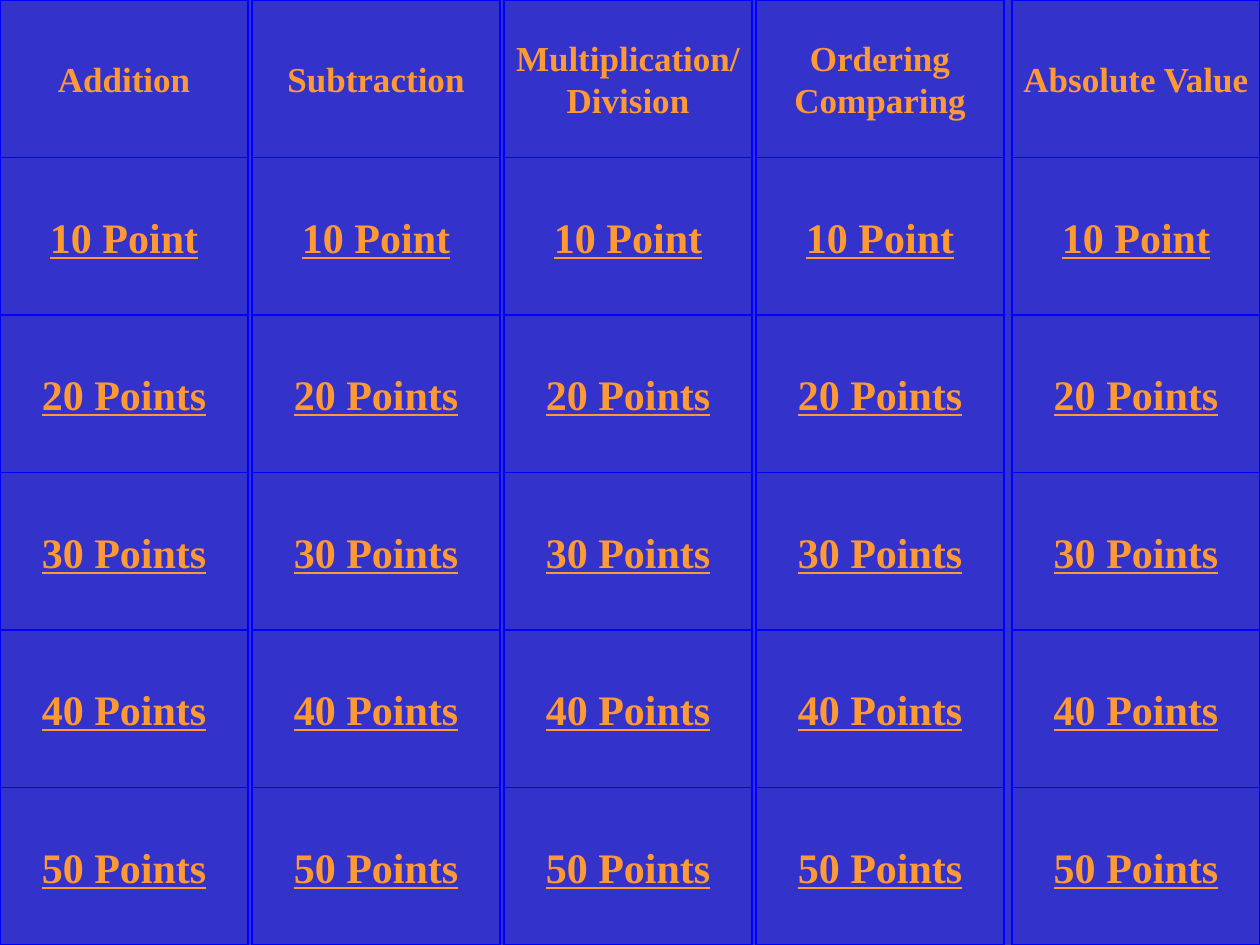
from pptx import Presentation
from pptx.dml.color import RGBColor
from pptx.enum.shapes import MSO_SHAPE
from pptx.enum.text import MSO_ANCHOR, PP_ALIGN
from pptx.util import Pt

BLUE, EDGE, GOLD = "3333CC", "0000FF", "FF9933"
WIDE, HIGH = 141.75, 90


def paint(fmt, color):
    fmt.solid()
    fmt.fore_color.rgb = RGBColor.from_string(color)


def add_cell(slide, left, top, text, size, under):
    cell = slide.shapes.add_shape(
        MSO_SHAPE.ACTION_BUTTON_CUSTOM, Pt(left), Pt(top), Pt(WIDE), Pt(HIGH))
    cell.shadow.inherit = False
    paint(cell.fill, BLUE)
    paint(cell.line.fill, EDGE)
    cell.line.width = Pt(0.75)
    frame = cell.text_frame
    frame.word_wrap = False
    frame.vertical_anchor = MSO_ANCHOR.MIDDLE
    frame.text = text
    for para in frame.paragraphs:
        para.alignment = PP_ALIGN.CENTER
        font = para.font
        font.name = "Times New Roman"
        font.size = Pt(size)
        font.bold = True
        font.underline = under
        paint(font.fill, GOLD)


# Slide and background
deck = Presentation()
deck.slide_width, deck.slide_height = Pt(720), Pt(540)
slide = deck.slides.add_slide(deck.slide_layouts[6])
paint(slide.background.fill, BLUE)

# Board: the last column sits flush with the right edge
topics = ["Addition", "Subtraction", "Multiplication/\nDivision",
          "Ordering\nComparing", "Absolute Value"]
lefts = [0, 144, 288, 432, 720 - WIDE]
scores = ["10 Point", "20 Points", "30 Points", "40 Points", "50 Points"]

for left, topic in zip(lefts, topics):
    add_cell(slide, left, 0, topic, 20, None)
    for row, score in enumerate(scores, 1):
        add_cell(slide, left, row * HIGH, score, 24, True)

deck.save("out.pptx")
